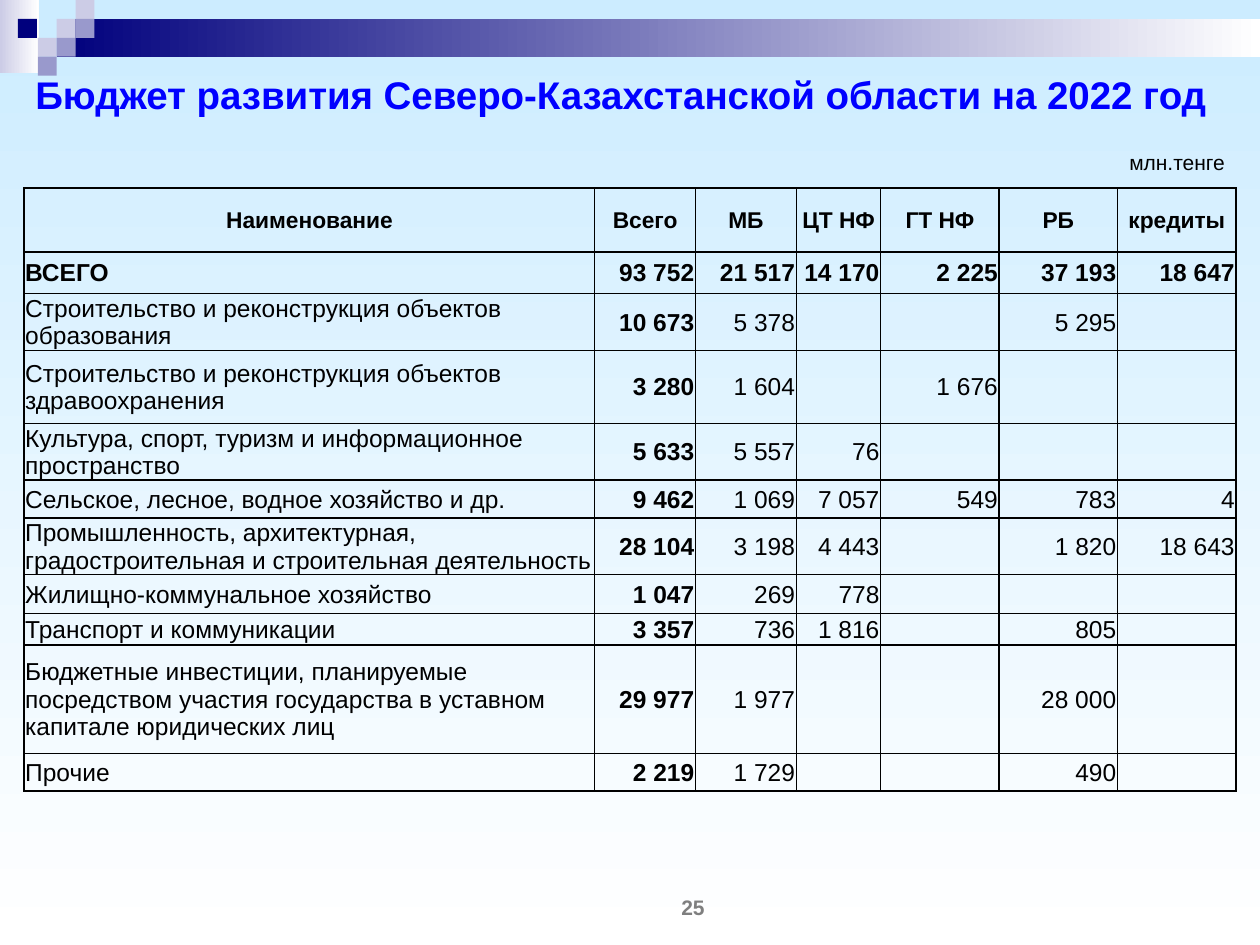
"""Build the regional development budget slide."""
from dataclasses import dataclass

from lxml import etree
from pptx import Presentation
from pptx.dml.color import RGBColor
from pptx.enum.shapes import MSO_SHAPE
from pptx.enum.text import MSO_ANCHOR, MSO_AUTO_SIZE, PP_ALIGN
from pptx.oxml.ns import qn
from pptx.util import Inches, Pt

RECTANGLE = MSO_SHAPE.RECTANGLE
MIDDLE = MSO_ANCHOR.MIDDLE
NO_AUTOFIT = MSO_AUTO_SIZE.NONE
LEFT, CENTER, RIGHT = PP_ALIGN.LEFT, PP_ALIGN.CENTER, PP_ALIGN.RIGHT

WIDTH, HEIGHT = 10, 7.5
TILE = 0.15
FONT = "Arial"
COLORS = {
    "sky": "CCECFF",
    "white": "FFFFFF",
    "lavender": "CCCCE6",
    "violet": "9999CC",
    "navy": "00007D",
    "title": "0000FF",
    "ink": "000000",
    "page": "7F7F7F",
}


@dataclass(frozen=True)
class Tile:
    """A decorative block measured in tile columns and rows."""

    column: float
    row: float
    color: str
    columns: float = 1
    rows: float = 1
    fade: bool = False


@dataclass(frozen=True)
class TextStyle:
    """Look of a piece of text."""

    size: float
    color: str = "ink"
    bold: bool = False
    align: PP_ALIGN = LEFT


@dataclass(frozen=True)
class BudgetLine:
    """A table row with its height in inches and amounts by source."""

    height: float
    name: str
    amounts: tuple[str, ...]


ORNAMENT = (
    Tile(0, 0, "lavender", 2.05, 3.87, fade=True),
    Tile(3, 1, "navy", WIDTH / TILE - 3, 2, fade=True),
    Tile(3, 1, "lavender"),
    Tile(4, 0, "lavender"),
    Tile(4, 1, "violet"),
    Tile(2, 2, "lavender"),
    Tile(0.95, 1, "navy"),
    Tile(3, 2, "violet"),
    Tile(2, 3, "violet"),
)
COLUMN_WIDTHS = (4.53, 0.8, 0.8, 0.67, 0.94, 0.94, 0.94)
BUDGET = (
    BudgetLine(0.51, "Наименование", ("Всего", "МБ", "ЦТ НФ", "ГТ НФ", "РБ", "кредиты")),
    BudgetLine(0.33, "ВСЕГО", ("93 752", "21 517", "14 170", "2 225", "37 193", "18 647")),
    BudgetLine(0.45, "Строительство и реконструкция объектов образования",
               ("10 673", "5 378", "", "", "5 295", "")),
    BudgetLine(0.58, "Строительство и реконструкция объектов здравоохранения",
               ("3 280", "1 604", "", "1 676", "", "")),
    BudgetLine(0.45, "Культура, спорт, туризм и информационное пространство",
               ("5 633", "5 557", "76", "", "", "")),
    BudgetLine(0.3, "Сельское, лесное, водное хозяйство и др.",
               ("9 462", "1 069", "7 057", "549", "783", "4")),
    BudgetLine(0.45, "Промышленность, архитектурная, градостроительная и строительная деятельность",
               ("28 104", "3 198", "4 443", "", "1 820", "18 643")),
    BudgetLine(0.31, "Жилищно-коммунальное хозяйство", ("1 047", "269", "778", "", "", "")),
    BudgetLine(0.25, "Транспорт и коммуникации", ("3 357", "736", "1 816", "", "805", "")),
    BudgetLine(0.86, "Бюджетные инвестиции, планируемые посредством участия государства "
                     "в уставном капитале юридических лиц",
               ("29 977", "1 977", "", "", "28 000", "")),
    BudgetLine(0.3, "Прочие", ("2 219", "1 729", "", "", "490", "")),
)


def rgb(name: str) -> RGBColor:
    """Return a palette colour."""
    return RGBColor.from_string(COLORS[name])


def fade_to_white(fill, start: str, angle: float) -> None:
    """Fill with a linear gradient that ends in white."""
    fill.gradient()
    fill.gradient_angle = angle
    for stop, name in zip(fill.gradient_stops, (start, "white")):
        stop.color.rgb = rgb(name)


def draw_tile(slide, tile: Tile) -> None:
    """Draw one block of the header ornament."""
    bounds = (tile.column, tile.row, tile.columns, tile.rows)
    block = slide.shapes.add_shape(RECTANGLE, *(Inches(TILE * n) for n in bounds))
    block.shadow.inherit = False
    block.line.fill.background()
    if tile.fade:
        fade_to_white(block.fill, tile.color, 0)
    else:
        block.fill.solid()
        block.fill.fore_color.rgb = rgb(tile.color)


def write(paragraph, text: str, style: TextStyle) -> None:
    """Write a styled run into a paragraph."""
    paragraph.alignment = style.align
    run = paragraph.add_run()
    run.text = text
    run.font.name = FONT
    run.font.size = Pt(style.size)
    run.font.bold = style.bold
    run.font.color.rgb = rgb(style.color)


def fill_frame(frame, text: str, style: TextStyle) -> None:
    """Write a single centred-height paragraph into a text frame."""
    frame.word_wrap = True
    frame.auto_size = NO_AUTOFIT
    frame.vertical_anchor = MIDDLE
    write(frame.paragraphs[0], text, style)


def add_label(slide, bounds: tuple[float, ...], text: str, style: TextStyle) -> None:
    """Add a small caption."""
    label = slide.shapes.add_textbox(*map(Inches, bounds))
    fill_frame(label.text_frame, text, style)


def add_borders(cell) -> None:
    """Give a cell thin borders on all sides."""
    properties = cell._tc.get_or_add_tcPr()
    for position, side in enumerate(("lnL", "lnR", "lnT", "lnB")):
        border = etree.Element(qn(f"a:{side}"), w=str(Pt(1)))
        paint = etree.SubElement(border, qn("a:solidFill"))
        etree.SubElement(paint, qn("a:srgbClr"), val=COLORS["ink"])
        properties.insert(position, border)


def fill_cell(cell, text: str, style: TextStyle) -> None:
    """Format a table cell and write its text."""
    cell.fill.background()
    add_borders(cell)
    cell.vertical_anchor = MIDDLE
    cell.margin_left = cell.margin_right = cell.margin_top = Inches(0.01)
    cell.margin_bottom = 0
    paragraph = cell.text_frame.paragraphs[0]
    if text:
        write(paragraph, text, style)
    else:
        etree.SubElement(paragraph._p, qn("a:endParaRPr"), sz=str(style.size * 100))


def add_budget(slide) -> None:
    """Draw the budget table."""
    bounds = (0.19, 1.49, sum(COLUMN_WIDTHS), sum(line.height for line in BUDGET))
    frame = slide.shapes.add_table(len(BUDGET), len(COLUMN_WIDTHS), *map(Inches, bounds))
    budget = frame.table
    budget.first_row = budget.horz_banding = False
    for column, width in zip(budget.columns, COLUMN_WIDTHS):
        column.width = Inches(width)
    for r, line in enumerate(BUDGET):
        budget.rows[r].height = Inches(line.height)
        for c, text in enumerate((line.name, *line.amounts)):
            align = CENTER if r == 0 else RIGHT if c else LEFT
            style = TextStyle(14 if r else 13, bold=r < 2 or c == 1, align=align)
            fill_cell(budget.cell(r, c), text, style)


def main() -> None:
    """Assemble and save the slide."""
    deck = Presentation()
    deck.slide_width, deck.slide_height = Inches(WIDTH), Inches(HEIGHT)
    slide = deck.slides.add_slide(deck.slide_layouts[5])
    fade_to_white(slide.background.fill, "sky", 270)
    for tile in ORNAMENT:
        draw_tile(slide, tile)
    title = slide.shapes.title
    title.left, title.top, title.width, title.height = map(Inches, (0.04, 0.45, 9.78, 0.59))
    fill_frame(title.text_frame, "Бюджет развития Северо-Казахстанской области на 2022 год",
               TextStyle(22, "title", True, CENTER))
    add_budget(slide)
    add_label(slide, (4.5, 7.08, 2, 0.24), "25", TextStyle(12, "page", True, CENTER))
    add_label(slide, (8.44, 1.17, 1.38, 0.24), "млн.тенге", TextStyle(12, align=RIGHT))
    deck.save("out.pptx")


if __name__ == "__main__":
    main()
